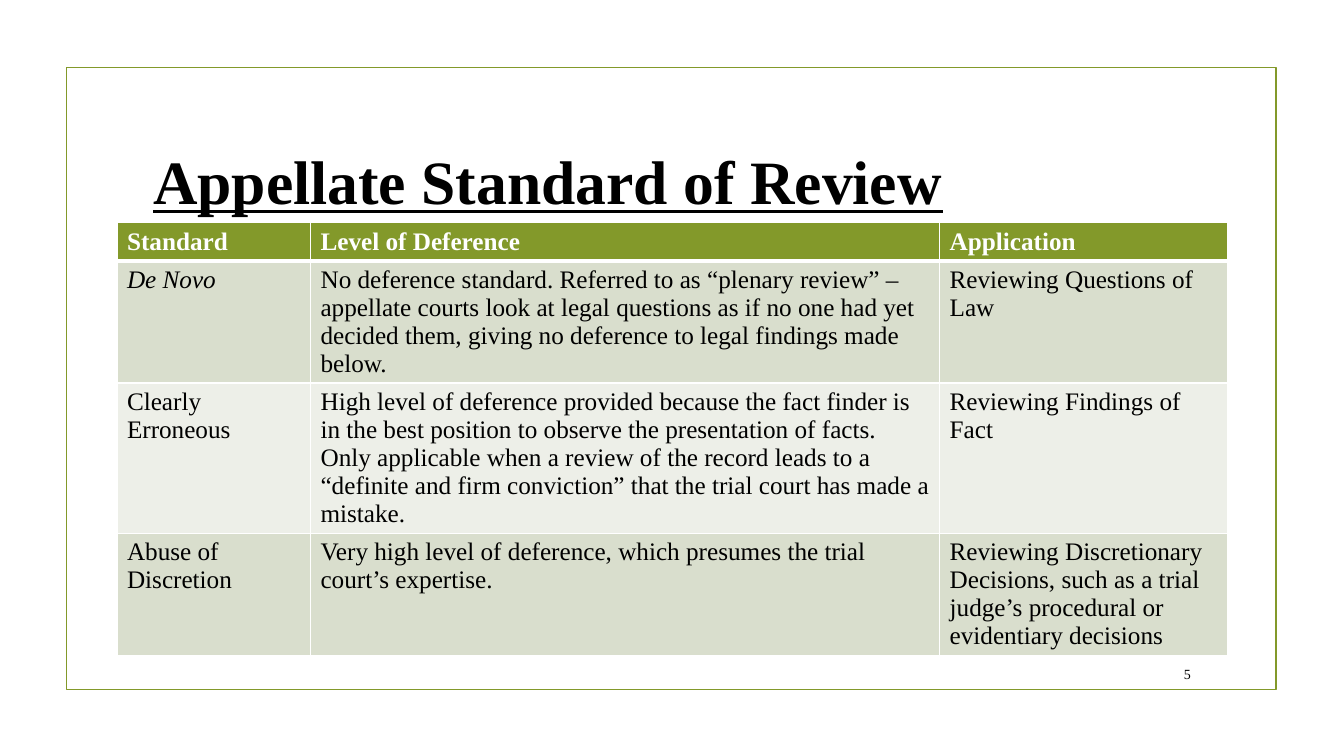
from dataclasses import dataclass

from lxml import etree
from pptx import Presentation
from pptx.dml.color import RGBColor
from pptx.enum.shapes import MSO_SHAPE
from pptx.enum.text import MSO_ANCHOR, MSO_AUTO_SIZE, PP_ALIGN
from pptx.oxml.ns import qn
from pptx.util import Inches, Pt

RECTANGLE = MSO_SHAPE.RECTANGLE
MIDDLE = MSO_ANCHOR.MIDDLE
LEFT, RIGHT = PP_ALIGN.LEFT, PP_ALIGN.RIGHT

# Content
TITLE = "Appellate Standard of Review"
PAGE_NUMBER = "5"
STANDARDS = [
    ("Standard", "Level of Deference", "Application"),
    ("De Novo",
     "No deference standard. Referred to as “plenary review” – appellate courts look at "
     "legal questions as if no one had yet decided them, giving no deference to legal "
     "findings made below.",
     "Reviewing Questions of Law"),
    ("Clearly Erroneous",
     "High level of deference provided because the fact finder is in the best position to "
     "observe the presentation of facts. Only applicable when a review of the record leads "
     "to a “definite and firm conviction” that the trial court has made a mistake.",
     "Reviewing Findings of Fact"),
    ("Abuse of Discretion",
     "Very high level of deference, which presumes the trial court’s expertise.",
     "Reviewing Discretionary Decisions, such as a trial judge’s procedural or "
     "evidentiary decisions"),
]
ITALIC_TERMS = {"De Novo"}

# Layout in inches: left, top, width, height
SLIDE_SIZE = (13.33, 7.5)
FRAME_BOX = (0.66, 0.67, 12, 6.17)
TITLE_BOX = (1.42, 1.07, 10.5, 1.43)
NUMBER_BOX = (11.32, 6.53, 0.59, 0.31)
TABLE_CORNER = (1.16, 2.21)
COLUMN_WIDTHS = (1.92, 6.24, 2.86)
ROW_HEIGHTS = (0.38, 1.21, 1.49, 1.21)  # each row fits its longest cell


@dataclass(frozen=True)
class Theme:
    font: str = "Times New Roman"
    green: str = "83992A"
    bands: tuple = ("EDEFE8", "D9DECD")
    text: str = "000000"
    white: str = "FFFFFF"
    title_size: int = 44
    table_size: int = 18
    number_size: int = 10
    frame_line: float = 1.25
    grid_line: int = 1
    header_line: int = 3


THEME = Theme()


def color(value):
    return RGBColor.from_string(value)


def inches(box):
    return [Inches(length) for length in box]


def write(text_frame, text, *, size, fill=THEME.text, align=LEFT,
          bold=False, italic=False, underline=False):
    paragraph = text_frame.paragraphs[0]
    paragraph.alignment = align
    run = paragraph.add_run()
    run.text = text
    font = run.font
    font.name, font.size = THEME.font, Pt(size)
    font.bold, font.italic, font.underline = bold, italic, underline
    font.color.rgb = color(fill)


def set_borders(cell, bottom):
    properties = cell._tc.get_or_add_tcPr()
    widths = {"lnL": THEME.grid_line, "lnR": THEME.grid_line,
              "lnT": THEME.grid_line, "lnB": bottom}
    for position, (side, width) in enumerate(widths.items()):
        line = etree.Element(qn(f"a:{side}"), w=str(Pt(width)))
        fill = etree.SubElement(line, qn("a:solidFill"))
        etree.SubElement(fill, qn("a:srgbClr"), val=THEME.white)
        properties.insert(position, line)


def add_frame(slide):
    frame = slide.shapes.add_shape(RECTANGLE, *inches(FRAME_BOX))
    frame.shadow.inherit = False
    frame.fill.background()
    frame.line.color.rgb = color(THEME.green)
    frame.line.width = Pt(THEME.frame_line)


def add_title(slide):
    title = slide.shapes.title
    title.left, title.top, title.width, title.height = inches(TITLE_BOX)
    title.text_frame.auto_size = MSO_AUTO_SIZE.NONE
    title.text_frame.vertical_anchor = MIDDLE
    write(title.text_frame, TITLE, size=THEME.title_size, bold=True, underline=True)


def add_page_number(slide):
    text_frame = slide.shapes.add_textbox(*inches(NUMBER_BOX)).text_frame
    text_frame.word_wrap = True
    text_frame.vertical_anchor = MIDDLE
    write(text_frame, PAGE_NUMBER, size=THEME.number_size, align=RIGHT)


def add_standards_table(slide):
    table_box = (*TABLE_CORNER, sum(COLUMN_WIDTHS), sum(ROW_HEIGHTS))
    table = slide.shapes.add_table(
        len(STANDARDS), len(COLUMN_WIDTHS), *inches(table_box)).table
    for column, width in zip(table.columns, COLUMN_WIDTHS):
        column.width = Inches(width)
    for row, height in zip(table.rows, ROW_HEIGHTS):
        row.height = Inches(height)

    for row_index, texts in enumerate(STANDARDS):
        header = row_index == 0
        background = THEME.green if header else THEME.bands[row_index % 2]
        for column_index, text in enumerate(texts):
            cell = table.cell(row_index, column_index)
            cell.fill.solid()
            cell.fill.fore_color.rgb = color(background)
            set_borders(cell, THEME.header_line if header else THEME.grid_line)
            write(cell.text_frame, text, size=THEME.table_size, bold=header,
                  fill=THEME.white if header else THEME.text,
                  italic=text in ITALIC_TERMS)


def main():
    presentation = Presentation()
    presentation.slide_width, presentation.slide_height = inches(SLIDE_SIZE)
    title_only = presentation.slide_layouts[5]
    slide = presentation.slides.add_slide(title_only)
    add_frame(slide)
    add_title(slide)
    add_standards_table(slide)
    add_page_number(slide)
    presentation.save("out.pptx")


if __name__ == "__main__":
    main()
